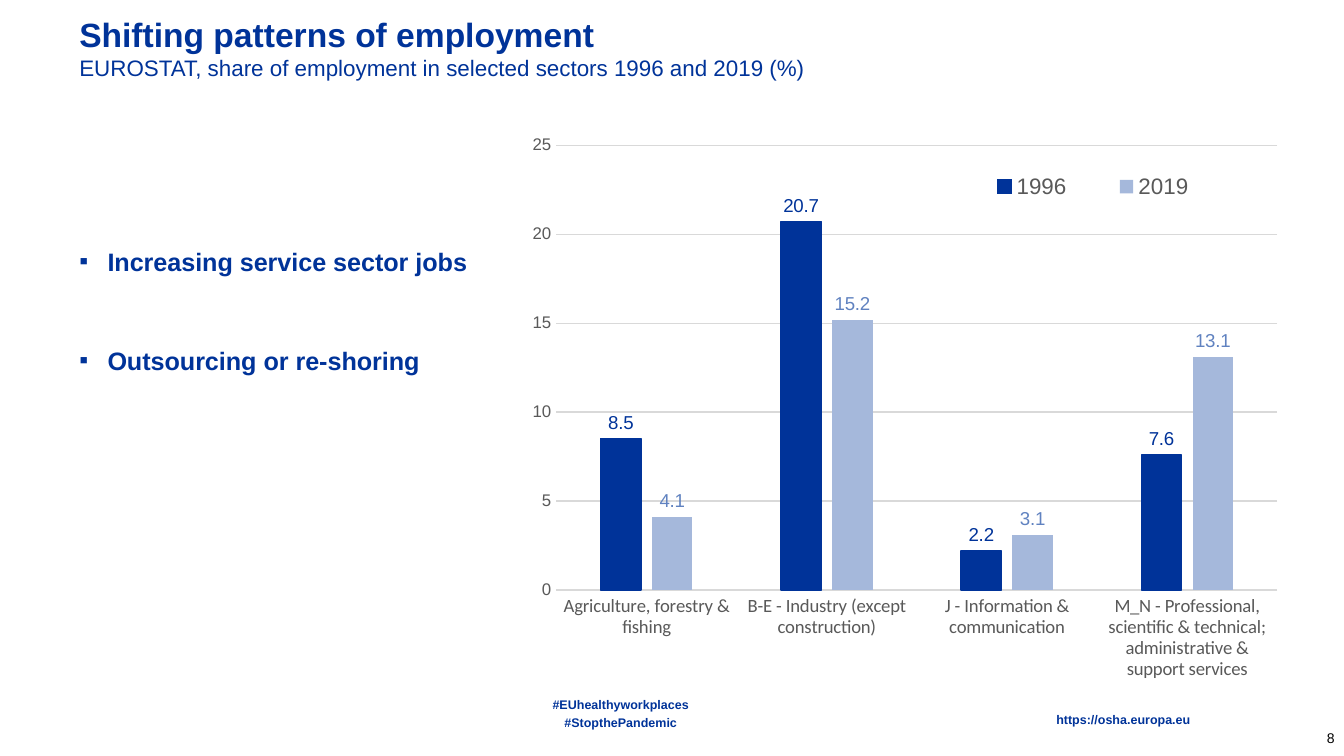
from dataclasses import dataclass

from lxml.etree import SubElement
from pptx import Presentation
from pptx.chart.data import CategoryChartData
from pptx.dml.color import RGBColor
from pptx.enum.chart import XL_CHART_TYPE, XL_LABEL_POSITION, XL_LEGEND_POSITION, XL_TICK_MARK
from pptx.enum.text import MSO_ANCHOR, MSO_AUTO_SIZE, PP_ALIGN
from pptx.oxml.ns import qn
from pptx.util import Inches, Pt

COLORS = {
    "navy": "003399",
    "light": "A5B8DB",
    "label": "6082C0",
    "gray": "595959",
    "grid": "D9D9D9",
    "black": "000000",
}


@dataclass
class Footer:
    lines: list[str]
    place: tuple[float, float, float, float]
    align: PP_ALIGN
    size: float = 6.75
    color: str = "navy"
    bold: bool = True
    line_spacing: float = 0.9
    gap: float = 2
    margins: tuple[float, float] = (0, 0)
    anchor: MSO_ANCHOR = MSO_ANCHOR.TOP


@dataclass
class Series:
    name: str
    values: list[float]
    fill: str
    label: str


FOOTERS = [
    Footer(["8"], (9.33, 5.34, 0.67, 0.3), PP_ALIGN.RIGHT, 7.5, "black", False, 1,
           margins=(0.07, 0.04), anchor=MSO_ANCHOR.MIDDLE),
    Footer(["https://osha.europa.eu"], (2.48, 5.31, 6.38, 0.09), PP_ALIGN.RIGHT),
    Footer(["#EUhealthyworkplaces", "#StopthePandemic"], (3.52, 5.2, 2.2, 0.32), PP_ALIGN.CENTER),
]
CATEGORIES = [
    "Agriculture, forestry & fishing",
    "B-E - Industry (except construction)",
    "J - Information & communication",
    "M_N - Professional, scientific & technical; administrative & support services",
]
SERIES = [
    Series("1996", [8.5, 20.7, 2.2, 7.6], "navy", "navy"),
    Series("2019", [4.1, 15.2, 3.1, 13.1], "light", "label"),
]


def rgb(name: str) -> RGBColor:
    return RGBColor.from_string(COLORS[name])


def style_font(font, size: float, color: str, bold: bool = False, face: str = "Arial") -> None:
    font.name = face
    font.size = Pt(size)
    font.bold = bold
    font.color.rgb = rgb(color)


def move(shape, place: tuple[float, float, float, float]) -> None:
    shape.left, shape.top, shape.width, shape.height = map(Inches, place)


def add_footer(page, footer: Footer) -> None:
    box = page.shapes.add_textbox(*map(Inches, footer.place))
    frame = box.text_frame
    frame.word_wrap = True
    frame.vertical_anchor = footer.anchor
    side, edge = map(Inches, footer.margins)
    frame.margin_left = frame.margin_right = side
    frame.margin_top = frame.margin_bottom = edge
    frame.text = "\n".join(footer.lines)
    for index, para in enumerate(frame.paragraphs):
        para.alignment = footer.align
        para.line_spacing = footer.line_spacing
        para.space_before = Pt(footer.gap if index else 0)
        style_font(para.runs[0].font, footer.size, footer.color, footer.bold)


def fill_title(title) -> None:
    move(title, (0.49, 0.15, 8.27, 0.4))
    frame = title.text_frame
    frame.auto_size = MSO_AUTO_SIZE.NONE
    frame.vertical_anchor = MSO_ANCHOR.MIDDLE
    para = frame.paragraphs[0]
    para.text = ("Shifting patterns of employment\v"
                 "EUROSTAT, share of employment in selected sectors 1996 and 2019 (%)")
    para.alignment = PP_ALIGN.LEFT
    heading, subtitle = para.runs
    style_font(heading.font, 18, "navy", True)
    style_font(subtitle.font, 12, "navy")
    # The line break takes the size of the heading
    line_break = para._p.find(qn("a:br"))
    SubElement(line_break, qn("a:rPr")).set("sz", "1800")


def add_bullet(para) -> None:
    properties = para._p.get_or_add_pPr()
    properties.set("marL", str(Inches(0.21)))
    properties.set("indent", str(-Inches(0.21)))
    color = SubElement(properties, qn("a:buClr"))
    SubElement(color, qn("a:srgbClr")).set("val", COLORS["navy"])
    SubElement(properties, qn("a:buFont")).set("typeface", "Arial")
    SubElement(properties, qn("a:buChar")).set("char", "▪")


def fill_body(body) -> None:
    move(body, (0.49, 0.92, 3.33, 3.99))
    frame = body.text_frame
    frame.auto_size = MSO_AUTO_SIZE.NONE
    frame.margin_top = Inches(0.91)
    frame.text = "Increasing service sector jobs\nOutsourcing or re-shoring"
    for index, para in enumerate(frame.paragraphs):
        add_bullet(para)
        para.space_before = Pt(37 if index else 0)
        style_font(para.runs[0].font, 13.5, "navy", True)


def set_layout(parent, position: int, **parts: float) -> None:
    """Place a plot area or legend by fractions of the chart."""
    for old in parent.findall(qn("c:layout")):
        parent.remove(old)
    layout = SubElement(parent, qn("c:layout"))
    parent.insert(position, layout)
    manual = SubElement(layout, qn("c:manualLayout"))
    if parent.tag == qn("c:plotArea"):
        SubElement(manual, qn("c:layoutTarget")).set("val", "inner")
    for mode in ("xMode", "yMode"):
        SubElement(manual, qn(f"c:{mode}")).set("val", "edge")
    for name, value in parts.items():
        SubElement(manual, qn(f"c:{name}")).set("val", str(value))


def add_employment_chart(page) -> None:
    data = CategoryChartData(number_format="#,##0.0")
    data.categories = CATEGORIES
    for entry in SERIES:
        data.add_series(entry.name, entry.values)
    place = map(Inches, (3.82, 0.92, 5.83, 4.26))
    chart = page.shapes.add_chart(XL_CHART_TYPE.COLUMN_CLUSTERED, *place, data).chart
    chart.has_title = False
    style_font(chart.font, 10, "black")

    # Columns and their labels
    plot = chart.plots[0]
    plot.gap_width, plot.overlap = 219, -27
    plot.vary_by_categories = False
    for series, entry in zip(plot.series, SERIES):
        series.format.fill.solid()
        series.format.fill.fore_color.rgb = rgb(entry.fill)
        labels = series.data_labels
        labels.show_value = True
        labels.position = XL_LABEL_POSITION.OUTSIDE_END
        labels.number_format = "#,##0.0"
        labels.number_format_is_linked = False
        style_font(labels.font, 10, entry.label)
    outline = plot.series[0].format.line
    outline.color.rgb = rgb("navy")
    outline.width = Pt(0.75)

    # Axes
    categories, values = chart.category_axis, chart.value_axis
    for axis, size, face in ((categories, 10, "Calibri"), (values, 9, "Arial")):
        axis.major_tick_mark = axis.minor_tick_mark = XL_TICK_MARK.NONE
        style_font(axis.tick_labels.font, size, "gray", face=face)
    values.minimum_scale, values.maximum_scale, values.major_unit = 0, 25, 5
    values.tick_labels.number_format = "#,##0"
    values.tick_labels.number_format_is_linked = False
    values.format.line.fill.background()
    for line in (categories.format.line, values.major_gridlines.format.line):
        line.color.rgb = rgb("grid")
        line.width = Pt(0.75)

    # Legend and plot area
    chart.has_legend = True
    legend = chart.legend
    legend.position = XL_LEGEND_POSITION.BOTTOM
    legend.include_in_layout = False
    style_font(legend.font, 12, "gray")
    set_layout(legend._element, 1, x=0.56, y=0.07, w=0.36, h=0.08)
    plot_area = chart._chartSpace.chart.plotArea
    set_layout(plot_area, 0, x=0.055, y=0.038, w=0.92, h=0.777)


def main() -> None:
    deck = Presentation()
    # Widescreen, 16:9
    deck.slide_width = Inches(10)
    deck.slide_height = deck.slide_width * 9 // 16
    page = deck.slides.add_slide(deck.slide_layouts[1])
    fill_title(page.shapes.title)
    fill_body(page.placeholders[1])
    add_employment_chart(page)
    for footer in FOOTERS:
        add_footer(page, footer)
    deck.save("out.pptx")


if __name__ == "__main__":
    main()
